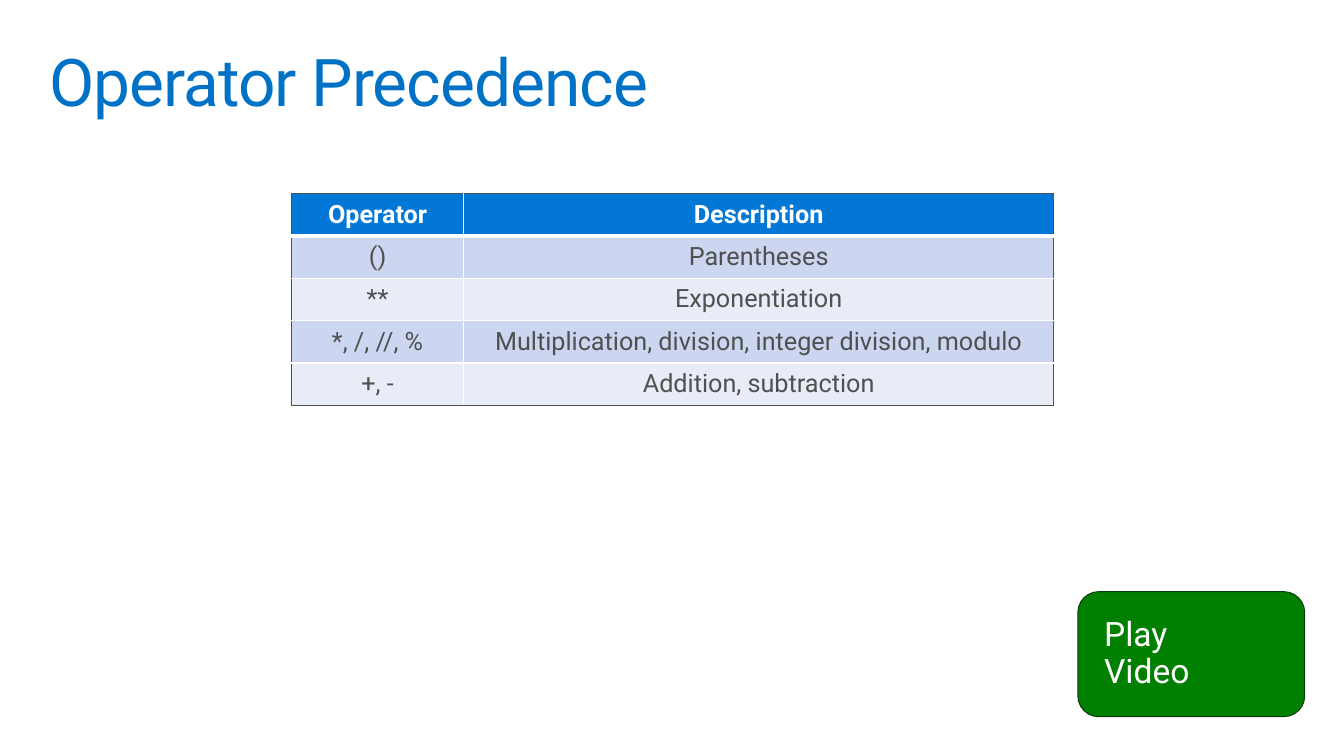
"""Build the operator precedence slide."""
from dataclasses import dataclass

from lxml.etree import SubElement
from pptx import Presentation
from pptx.dml.color import RGBColor
from pptx.enum.shapes import MSO_SHAPE as Shape
from pptx.enum.text import MSO_ANCHOR as Anchor, PP_ALIGN as Align
from pptx.oxml.ns import qn
from pptx.util import Pt

PX = 9144
OPERATORS = [
    ("Operator", "Description"),
    ("()", "Parentheses"),
    ("**", "Exponentiation"),
    ("*, /, //, %", "Multiplication, division, integer division, modulo"),
    ("+, -", "Addition, subtraction"),
]


@dataclass(frozen=True)
class Theme:
    """Colours and type sizes of the slide."""
    font: str = "Roboto"
    title: str = "0072C6"
    white: str = "FFFFFF"
    ink: str = "505050"
    header: str = "0377D6"
    bands: tuple = ("E7ECF7", "CCD6F0")
    button: str = "007F00"
    button_line: str = "083E08"
    title_size: int = 47
    button_size: int = 24
    table_size: int = 18


THEME = Theme()


def px(*lengths):
    """Turn pixel lengths into EMU."""
    return [length * PX for length in lengths]


def assign(target, values):
    """Set attributes from a dict of format values."""
    for name, value in values.items():
        setattr(target, name, value)


def write(frame, text, size, color, bold=False, **paragraph_format):
    """Put one formatted paragraph in a text frame."""
    paragraph = frame.paragraphs[0]
    paragraph.text = text
    assign(paragraph, paragraph_format)
    for run in paragraph.runs:
        assign(run.font, {"name": THEME.font, "size": Pt(size), "bold": bold})
        run.font.color.rgb = RGBColor.from_string(color)
    return paragraph


def set_frame(frame, horizontal, vertical, anchor):
    """Set wrapping, anchor and margins of a text frame."""
    side, end = px(horizontal, vertical)
    assign(frame, {"word_wrap": True, "vertical_anchor": anchor, "margin_left": side,
                   "margin_right": side, "margin_top": end, "margin_bottom": end})


def add_title(slide, text, box):
    """Add the slide title with slightly tightened letters."""
    frame = slide.shapes.add_textbox(*px(*box)).text_frame
    set_frame(frame, 10, 10, Anchor.TOP)
    paragraph = write(frame, text, THEME.title_size, THEME.title, line_spacing=0.9)
    for run in paragraph.runs:
        run.font._element.set("spc", "-70")


def add_button(slide, text, box):
    """Add a rounded button."""
    shape = slide.shapes.add_shape(Shape.ROUNDED_RECTANGLE, *px(*box))
    shape.shadow.inherit = False
    shape.fill.solid()
    shape.fill.fore_color.rgb = RGBColor.from_string(THEME.button)
    shape.line.color.rgb = RGBColor.from_string(THEME.button_line)
    shape.line.width = Pt(0.75)
    set_frame(shape.text_frame, 20, 16, Anchor.MIDDLE)
    write(shape.text_frame, text, THEME.button_size, THEME.white,
          alignment=Align.LEFT, line_spacing=0.9)


def add_border(cell, side, color, points):
    """Draw one side of a cell."""
    line = SubElement(cell._tc.get_or_add_tcPr(), qn(f"a:ln{side}"), w=str(Pt(points)))
    SubElement(SubElement(line, qn("a:solidFill")), qn("a:srgbClr"), val=color)


def style_cell(cell, text, is_header, fill, outer):
    """Fill, frame and write one table cell."""
    side, end = px(30, 6)
    assign(cell, {"vertical_anchor": Anchor.MIDDLE, "margin_left": side,
                  "margin_right": side, "margin_top": end, "margin_bottom": end})
    for edge, is_outer in outer.items():
        points = 3 if is_header and edge == "B" else 1
        add_border(cell, edge, THEME.ink if is_outer else THEME.white, points)
    cell.fill.solid()
    cell.fill.fore_color.rgb = RGBColor.from_string(fill)
    write(cell.text_frame, text, THEME.table_size,
          THEME.white if is_header else THEME.ink, is_header, alignment=Align.CENTER)


def add_grid(slide, rows, left, top, widths, row_height):
    """Add a banded table with a dark outline and white inner lines."""
    box = px(left, top, sum(widths), row_height * len(rows))
    table = slide.shapes.add_table(len(rows), len(widths), *box).table
    for column, width in zip(table.columns, px(*widths)):
        column.width = width
    for row, texts in enumerate(rows):
        fill = THEME.bands[row % 2] if row else THEME.header
        for column, text in enumerate(texts):
            outer = {"L": column == 0, "R": column == len(widths) - 1,
                     "T": row == 0, "B": row == len(rows) - 1}
            style_cell(table.cell(row, column), text, row == 0, fill, outer)


def main():
    """Build and save the slide."""
    presentation = Presentation()
    assign(presentation, dict(zip(("slide_width", "slide_height"), px(1333, 750))))
    slide = presentation.slides.add_slide(presentation.slide_layouts[6])
    add_title(slide, "Operator Precedence", (39, 39, 1255, 98))
    add_button(slide, "Play\vVideo", (1069, 587, 225, 124))
    add_grid(slide, OPERATORS, 289, 192, (171, 585), 42)
    presentation.save("out.pptx")


if __name__ == "__main__":
    main()
